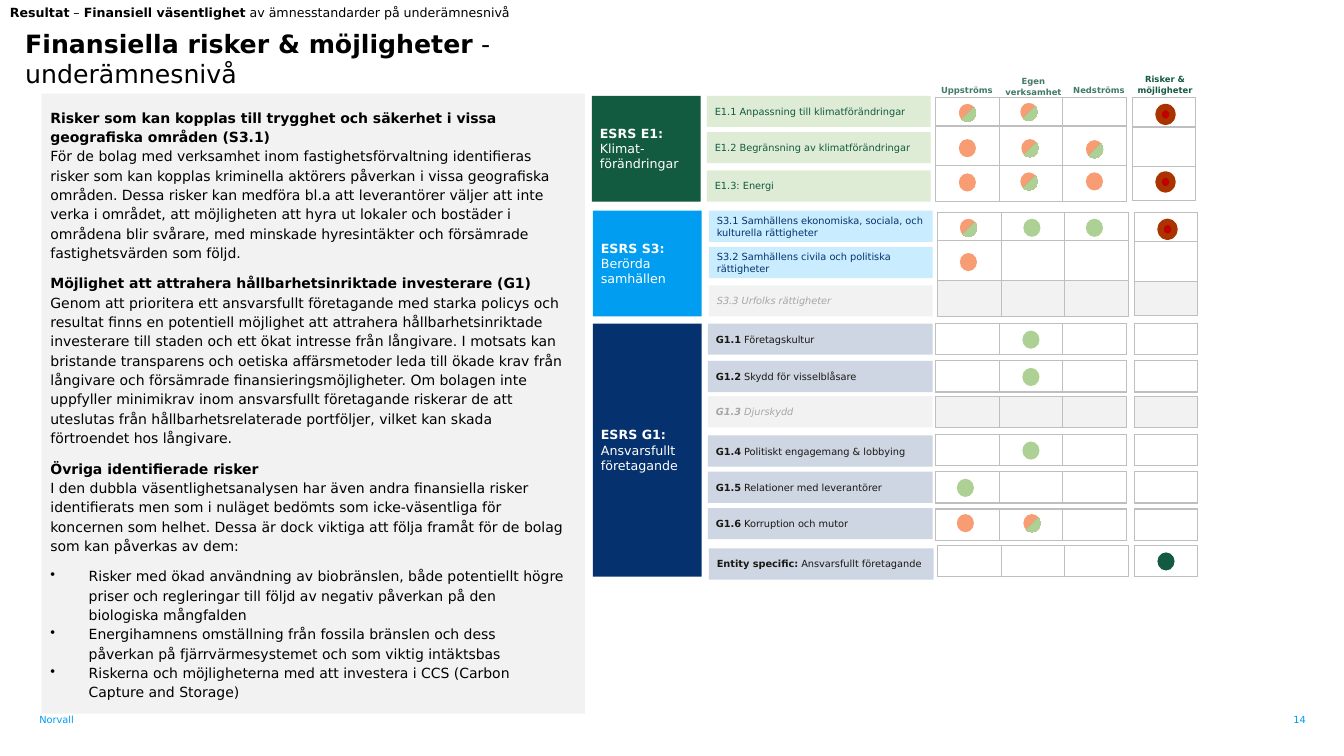
from lxml.etree import SubElement
from pptx import Presentation
from pptx.dml.color import RGBColor
from pptx.enum.shapes import MSO_SHAPE as Shape
from pptx.enum.text import MSO_ANCHOR as Anchor, MSO_AUTO_SIZE as AutoSize, PP_ALIGN as Align
from pptx.oxml.ns import qn
from pptx.util import Pt

PX = 9144  # 100 px to the inch
BLACK, WHITE, GREY, FADED = "000000", "FFFFFF", "F2F2F2", "A6A6A6"
DARK_GREEN, BLUE, NAVY = "125A40", "009DF0", "05326E"
ORANGE, LIGHT_GREEN = "F89D73", "ADD095"
CELL_WIDTH = 63


def rgb(value):
    return RGBColor.from_string(value)


def px(*lengths):
    return [length * PX for length in lengths]


class SlideBuilder:
    def __init__(self, slide, font):
        self.slide = slide
        self.shapes = slide.shapes
        self.font = font

    def set_text(self, paragraph, text, size, color, italic=None, align=Align.LEFT):
        """Add text in which ** switches bold on and off and a newline breaks the line."""
        paragraph.alignment = align
        font = paragraph.font
        font.name, font.size, font.italic = self.font, Pt(size), italic
        font.color.rgb = rgb(color)
        for index, part in enumerate(text.split("**")):
            for line_number, line in enumerate(part.split("\n")):
                if line_number:
                    paragraph.add_line_break()
                if line:
                    run = paragraph.add_run()
                    run.text = line
                    run.font.bold = index % 2 == 1

    def set_frame(self, frame, insets, anchor=Anchor.TOP):
        frame.word_wrap = True
        frame.auto_size = AutoSize.NONE
        frame.vertical_anchor = anchor
        frame.margin_left = frame.margin_right = insets[0] * PX
        frame.margin_top = frame.margin_bottom = insets[1] * PX

    def title(self, area, text, size):
        title = self.shapes.title
        title.left, title.top, title.width, title.height = px(*area)
        self.set_frame(title.text_frame, (10, 5))
        self.set_text(title.text_frame.paragraphs[0], text, size, BLACK)

    def text(self, area, text, size, color, align=Align.LEFT, anchor=Anchor.TOP, insets=(0, 0)):
        frame = self.shapes.add_textbox(*px(*area)).text_frame
        self.set_frame(frame, insets, anchor)
        self.set_text(frame.paragraphs[0], text, size, color, align=align)

    def shape(self, kind, area, fill):
        shape = self.shapes.add_shape(kind, *px(*area))
        shape.shadow.inherit = False
        shape.line.fill.background()
        shape.fill.solid()
        shape.fill.fore_color.rgb = rgb(fill)
        return shape

    def box(self, area, fill, text, size, color, italic=None):
        frame = self.shape(Shape.RECTANGLE, area, fill).text_frame
        self.set_frame(frame, (8, 4), Anchor.MIDDLE)
        self.set_text(frame.paragraphs[0], text, size, color, italic)

    def article(self, area, fill, sections, bullets):
        frame = self.shape(Shape.RECTANGLE, area, fill).text_frame
        self.set_frame(frame, (8, 4), Anchor.MIDDLE)
        for index, text in enumerate(sections + bullets):
            paragraph = frame.add_paragraph() if index else frame.paragraphs[0]
            paragraph.line_spacing = 1.15
            is_bullet = index >= len(sections)
            if not is_bullet or text == bullets[-1]:
                paragraph.space_after = Pt(8)
            if is_bullet:
                properties = paragraph._p.get_or_add_pPr()
                properties.set("marL", str(38 * PX))
                properties.set("indent", str(-38 * PX))
                SubElement(properties, qn("a:buChar")).set("char", "•")
            self.set_text(paragraph, text, 10, BLACK)

    def table(self, left, top, columns, heights, fills):
        area = px(left, top, columns * CELL_WIDTH, sum(heights))
        table = self.shapes.add_table(len(heights), columns, *area).table
        table.first_row = table.horz_banding = False
        for column in table.columns:
            column.width = CELL_WIDTH * PX
        for row, height, fill in zip(table.rows, heights, fills):
            row.height = height * PX
            for cell in row.cells:
                cell.margin_left = cell.margin_right = cell.margin_top = cell.margin_bottom = 0
                cell.text_frame.paragraphs[0].font.size = Pt(7)
                self.cell_borders(cell)
                cell.fill.solid()
                cell.fill.fore_color.rgb = rgb(fill)

    def cell_borders(self, cell):
        properties = cell._tc.get_or_add_tcPr()
        for side in ("lnL", "lnR", "lnT", "lnB"):
            line = SubElement(properties, qn(f"a:{side}"), w=str(Pt(1)))
            SubElement(SubElement(line, qn("a:solidFill")), qn("a:srgbClr"), val="BFBFBF")

    def dot(self, left, top, fill):
        return self.shape(Shape.OVAL, (left, top, 17, 18), fill)

    def split_dot(self, left, top):
        fill = self.dot(left, top, ORANGE).fill
        fill.gradient()
        fill.gradient_angle = 315
        for stop, position, color in zip(fill.gradient_stops, (0.5, 0.54), (ORANGE, LIGHT_GREEN)):
            stop.position = position
            stop.color.rgb = rgb(color)

    def risk_dot(self, left, top):
        line = self.shape(Shape.OVAL, (left, top, 14, 15), "C00000").line
        line.color.rgb = rgb("AA3300")
        line.width = Pt(4.5)


SECTIONS = [
    "**Risker som kan kopplas till trygghet och säkerhet i vissa geografiska områden (S3.1)\n**"
    "För de bolag med verksamhet inom fastighetsförvaltning identifieras risker som kan kopplas kriminella "
    "aktörers påverkan i vissa geografiska områden. Dessa risker kan medföra bl.a att leverantörer väljer att "
    "inte verka i området, att möjligheten att hyra ut lokaler och bostäder i områdena blir svårare, med "
    "minskade hyresintäkter och försämrade fastighetsvärden som följd.",
    "**Möjlighet att attrahera hållbarhetsinriktade investerare (G1)\n**"
    "Genom att prioritera ett ansvarsfullt företagande med starka policys och resultat finns en potentiell "
    "möjlighet att attrahera hållbarhetsinriktade investerare till staden och ett ökat intresse från långivare. "
    "I motsats kan bristande transparens och oetiska affärsmetoder leda till ökade krav från långivare och "
    "försämrade finansieringsmöjligheter. Om bolagen inte uppfyller minimikrav inom ansvarsfullt företagande "
    "riskerar de att uteslutas från hållbarhetsrelaterade portföljer, vilket kan skada förtroendet hos långivare.",
    "**Övriga identifierade risker\n**"
    "I den dubbla väsentlighetsanalysen har även andra finansiella risker identifierats men som i nuläget "
    "bedömts som icke-väsentliga för koncernen som helhet. Dessa är dock viktiga att följa framåt för de bolag "
    "som kan påverkas av dem:",
]
BULLETS = [
    "Risker med ökad användning av biobränslen, både potentiellt högre priser och regleringar till följd av "
    "negativ påverkan på den biologiska mångfalden",
    "Energihamnens omställning från fossila bränslen och dess påverkan på fjärrvärmesystemet och som viktig "
    "intäktsbas",
    "Riskerna och möjligheterna med att investera i CCS (Carbon Capture and Storage)",
]
HEADINGS = [
    (924, 84, 70, "Uppströms", "417B66"),
    (990, 76, 70, "Egen verksamhet", "417B66"),
    (1055, 84, 70, "Nedströms", "417B66"),
    (1123, 74, 65, "Risker & möjligheter", DARK_GREEN),
]
# block left, top, fill; shift of labels and tables; label fill and colour; block text; topics
GRID_GROUPS = [
    (587, 95, DARK_GREEN, 0, "DEECD5", DARK_GREEN, "**ESRS E1:** Klimat-förändringar",
     ["E1.1 Anpassning till klimatförändringar", "E1.2 Begränsning av klimatförändringar", "E1.3: Energi"]),
    (588, 209, BLUE, 2, "C9ECFF", NAVY, "**ESRS S3:** Berörda samhällen",
     ["S3.1 Samhällens ekonomiska, sociala, och kulturella rättigheter",
      "S3.2 Samhällens civila och politiska rättigheter", "S3.3 Urfolks rättigheter"]),
]
# label top, table top, shift, text
GOVERNANCE_TOPICS = [
    (321, 321, 0, "**G1.1** Företagskultur"),
    (358, 358, 0, "**G1.2** Skydd för visselblåsare"),
    (393, 393, 0, "**G1.3** Djurskydd"),
    (432, 431, 0, "**G1.4** Politiskt engagemang & lobbying"),
    (468, 468, 0, "**G1.5** Relationer med leverantörer"),
    (504, 505, 0, "**G1.6** Korruption och mutor"),
    (544, 541, 1, "**Entity specific:** Ansvarsfullt företagande"),
]
INACTIVE = ("S3.3", "**G1.3")
DOTS = {
    ORANGE: [(951, 138), (951, 172), (1077, 171), (952, 251), (949, 510)],
    LIGHT_GREEN: [(1015, 217), (1077, 217), (1014, 328), (1014, 365), (1014, 438), (949, 475)],
    DARK_GREEN: [(1148, 548)],
}
SPLIT_DOTS = [(951, 103), (1012, 102), (1013, 138), (1077, 139), (1012, 171), (952, 217), (1015, 510)]
RISK_DOTS = [(1149, 106), (1149, 173), (1151, 220)]


def add_topic(builder, area, fill, text, color):
    if text.startswith(INACTIVE):
        builder.box(area, GREY, text, 7, FADED, italic=True)
    else:
        builder.box(area, fill, text, 7, color)


def row_fill(text):
    return GREY if text.startswith(INACTIVE) else WHITE


def main():
    presentation = Presentation()
    presentation.slide_width, presentation.slide_height = px(1333, 750)
    slide = presentation.slides.add_slide(presentation.slide_layouts[5])
    builder = SlideBuilder(slide, "DejaVu Sans")

    builder.text((39, 696, 85, 24), "Norvall", 7, BLUE, anchor=Anchor.BOTTOM)
    builder.text((1226, 708, 69, 12), "14", 7, BLUE, Align.RIGHT, Anchor.BOTTOM)
    builder.shape(Shape.RECTANGLE, (41, 93, 539, 615), GREY)
    builder.article((42, 106, 525, 589), GREY, SECTIONS, BULLETS)
    builder.title((15, 23, 581, 71), "**Finansiella risker & möjligheter** - underämnesnivå", 18)
    builder.text((0, 0, 811, 25), "**Resultat** – **Finansiell väsentlighet** av ämnesstandarder på underämnesnivå",
                 9, BLACK, insets=(10, 5))
    for left, top, width, text, color in HEADINGS:
        builder.text((left, top, width, 20), f"**{text}**", 6, color, Align.CENTER)

    for left, top, block_fill, shift, fill, color, heading, topics in GRID_GROUPS:
        builder.box((left, top, 108, 105), block_fill, heading, 9, WHITE)
        for offset, topic in zip((0, 36, 74), topics):
            add_topic(builder, (701 + shift, top + offset, 222, 31), fill, topic, color)
        fills = [row_fill(topic) for topic in topics]
        builder.table(928 + shift, top + 2, 3, (28, 39, 36), fills)
        builder.table(1123 + shift, top + 2, 1, (29, 39, 34), fills)

    builder.box((588, 321, 108, 251), NAVY, "**ESRS G1:** Ansvarsfullt företagande", 9, WHITE)
    for label_top, table_top, shift, topic in GOVERNANCE_TOPICS:
        add_topic(builder, (702 + shift, label_top, 223, 31), "CED6E3", topic, "1A1813")
        builder.table(928 + 2 * shift, table_top, 3, [31], [row_fill(topic)])
        builder.table(1125, table_top, 1, [31], [row_fill(topic)])

    for fill, places in DOTS.items():
        for left, top in places:
            builder.dot(left, top, fill)
    for left, top in SPLIT_DOTS:
        builder.split_dot(left, top)
    for left, top in RISK_DOTS:
        builder.risk_dot(left, top)
    presentation.save("out.pptx")


if __name__ == "__main__":
    main()
